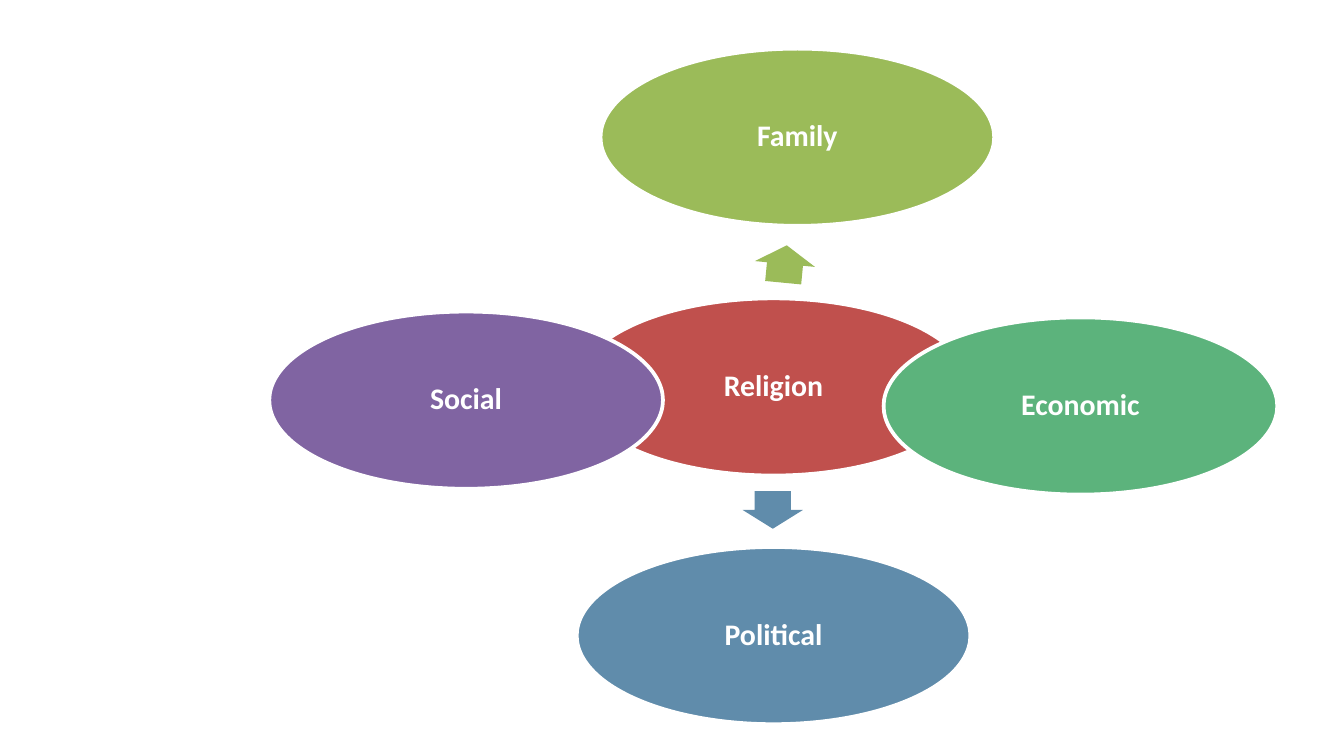
import pptx
import pptx.dml.color
import pptx.enum.shapes
import pptx.enum.text
import pptx.util

Cm = pptx.util.Cm
Pt = pptx.util.Pt
SHAPE = pptx.enum.shapes.MSO_SHAPE

COLORS = {
    "white": "FFFFFF",
    "religion": "C0504D",
    "family": "9BBB59",
    "economic": "5CB37C",
    "political": "608CAB",
    "social": "8064A2",
}


class InstitutionDiagram:
    font_name = "Calibri"
    font_size = Pt(16)
    oval_width, oval_height = 7.44, 3.35
    arrow_height = 1.14
    inset = Cm(0.05)

    def __init__(self, slide):
        self.slide = slide

    def color(self, name):
        return pptx.dml.color.RGBColor.from_string(COLORS[name])

    def filled_shape(self, kind, left, top, width, height, color):
        figure = self.slide.shapes.add_shape(
            kind, Cm(left), Cm(top), Cm(width), Cm(height))
        figure.shadow.inherit = False
        figure.fill.solid()
        figure.fill.fore_color.rgb = self.color(color)
        return figure

    def oval(self, label, left, top):
        institution = self.filled_shape(
            SHAPE.OVAL, left, top, self.oval_width, self.oval_height, label.lower())
        institution.line.color.rgb = self.color("white")
        institution.line.width = Pt(2)
        frame = institution.text_frame
        frame.word_wrap = True
        frame.vertical_anchor = pptx.enum.text.MSO_ANCHOR.MIDDLE
        frame.margin_left = frame.margin_right = self.inset
        frame.margin_top = frame.margin_bottom = self.inset
        paragraph = frame.paragraphs[0]
        paragraph.alignment = pptx.enum.text.PP_ALIGN.CENTER
        paragraph.line_spacing = 0.9
        run = paragraph.add_run()
        run.text = label
        run.font.name = self.font_name
        run.font.size = self.font_size
        run.font.bold = True
        run.font.color.rgb = self.color("white")

    def arrow(self, left, top, width, rotation, color):
        pointer = self.filled_shape(
            SHAPE.RIGHT_ARROW, left, top, width, self.arrow_height, color)
        pointer.line.fill.background()
        pointer.adjustments[0] = 0.6
        pointer.adjustments[1] = 0.5
        pointer.rotation = rotation


def main():
    presentation = pptx.Presentation()
    presentation.slide_width = Cm(25.4)
    presentation.slide_height = Cm(14.29)
    diagram = InstitutionDiagram(
        presentation.slides.add_slide(presentation.slide_layouts[6]))

    diagram.oval("Religion", 10.9, 5.64)
    influences = [
        ("Family", (11.35, 0.92), (14.48, 4.42, 0.71, 275.5)),
        ("Economic", (16.7, 6.0), (17.12, 6.93, 0.84, 183.6)),
        ("Political", (10.9, 10.34), (14.25, 9.07, 0.71, 90)),
        ("Social", (5.09, 5.89), (11.25, 6.86, 0.84, 357.6)),
    ]
    for label, oval_place, arrow_place in influences:
        diagram.arrow(*arrow_place, label.lower())
        diagram.oval(label, *oval_place)

    presentation.save("out.pptx")


if __name__ == "__main__":
    main()
